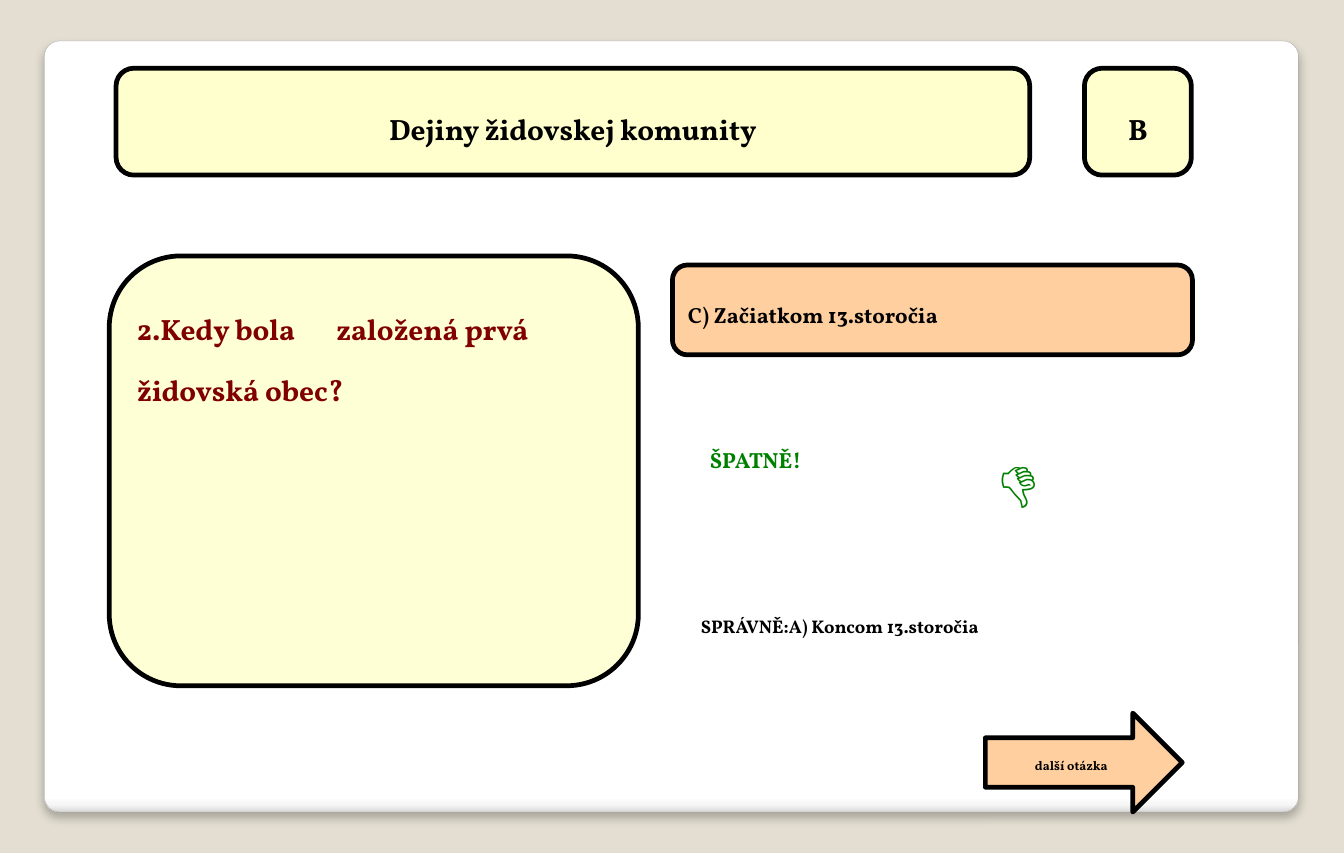
from dataclasses import dataclass

from lxml import etree
from pptx import Presentation
from pptx.dml.color import RGBColor
from pptx.enum.shapes import MSO_SHAPE
from pptx.enum.text import MSO_ANCHOR, PP_ALIGN
from pptx.oxml.ns import qn
from pptx.util import Cm, Emu, Inches, Pt

PX = 9144  # one hundredth of an inch
FONT = "Vollkorn"
RAISE = 3000  # slight superscript, in thousandths of a percent
BLACK, GREEN, MAROON = "000000", "008000", "800000"
YELLOW, ORANGE = "FFFF99", "FF9933"
ROUND = MSO_SHAPE.ROUNDED_RECTANGLE
PANEL = MSO_SHAPE.FLOWCHART_ALTERNATE_PROCESS
ARROW = MSO_SHAPE.RIGHT_ARROW
LEFT, CENTER = PP_ALIGN.LEFT, PP_ALIGN.CENTER
TOP, MIDDLE = MSO_ANCHOR.TOP, MSO_ANCHOR.MIDDLE


@dataclass
class Box:
    kind: MSO_SHAPE
    area: tuple[int, int, int, int]
    fill: str
    alpha: int
    text: str
    size: int
    color: str = BLACK
    align: PP_ALIGN = CENTER
    anchor: MSO_ANCHOR = MIDDLE
    wrap: bool = False
    inset: tuple[int, int, int, int] = (10, 5, 10, 5)


@dataclass
class Label:
    area: tuple[int, int, int, int]
    text: str
    size: int
    color: str
    wrap: bool = True


BOXES = [
    Box(PANEL, (953, 60, 94, 94), YELLOW, 49, "B", 32),
    Box(PANEL, (591, 233, 457, 79), ORANGE, 47,
        "C) Začiatkom 13.storočia", 24, align=LEFT),
    Box(ARROW, (866, 627, 173, 87), ORANGE, 47, "další otázka", 14),
    Box(ROUND, (102, 60, 803, 94), YELLOW, 49, "Dejiny židovskej komunity", 32),
    Box(PANEL, (96, 225, 465, 378), YELLOW, 40,
        "2.Kedy bola\tzaložená prvá židovská obec?", 32, MAROON,
        LEFT, TOP, True, (6, 13, 6, 5)),
]
LABELS = [
    Label((614, 375, 205, 91), "ŠPATNĚ!", 24, GREEN),
    Label((866, 344, 88, 131), "👎", 72, GREEN, False),
    Label((606, 525, 438, 77), "SPRÁVNĚ:A) Koncom 13.storočia", 20, BLACK),
]
STOPS = [(0, "FFFFFF"), (98, "FFFFFF"), (99, "F7F7F7"), (100, "DADADA")]


def px(n: int) -> Emu:
    return Emu(n * PX)


def rgb(code: str) -> RGBColor:
    return RGBColor.from_string(code)


def add_tag(node, tag: str, **attrs):
    return etree.SubElement(node, qn(tag), {k: str(v) for k, v in attrs.items()})


def add_shape(slide, kind: MSO_SHAPE, area: tuple, line: str, width: float):
    shape = slide.shapes.add_shape(kind, *map(px, area))
    shape.shadow.inherit = False
    shape.line.color.rgb = rgb(line)
    shape.line.width = Pt(width)
    return shape


def set_text(frame, text: str, size: int, color: str, wrap: bool,
             align: PP_ALIGN = LEFT) -> None:
    frame.word_wrap = wrap
    frame.text = text
    para = frame.paragraphs[0]
    para.alignment = align
    font = para.font
    font.name, font.size, font.bold = FONT, Pt(size), True
    font.color.rgb = rgb(color)
    font._element.set("baseline", str(RAISE))


def add_card(slide) -> None:
    card = add_shape(slide, ROUND, (39, 36, 1102, 678), "A4A4A4", 0.16)
    card.adjustments[0] = 0.02
    card.fill.gradient()
    card.fill.gradient_angle = 270
    props = card.element.spPr
    stops = props.find(qn("a:gradFill")).find(qn("a:gsLst"))
    for old in list(stops):
        stops.remove(old)
    for pos, code in STOPS:
        stop = add_tag(stops, "a:gs", pos=pos * 1000)
        add_tag(stop, "a:srgbClr", val=code)
    # Soft shadow below the card
    shade = add_tag(props.find(qn("a:effectLst")), "a:outerShdw", blurRad=Pt(6),
                    dist=Pt(4), dir=5400000, algn="ctr", rotWithShape=0)
    tint = add_tag(shade, "a:srgbClr", val=BLACK)
    add_tag(tint, "a:alpha", val=25000)


def add_box(slide, box: Box):
    shape = add_shape(slide, box.kind, box.area, BLACK, 3)
    shape.fill.solid()
    shape.fill.fore_color.rgb = rgb(box.fill)
    tint = shape.element.spPr.find(qn("a:solidFill"))[0]
    add_tag(tint, "a:alpha", val=box.alpha * 1000)
    frame = shape.text_frame
    frame.vertical_anchor = box.anchor
    (frame.margin_left, frame.margin_top,
     frame.margin_right, frame.margin_bottom) = map(px, box.inset)
    set_text(frame, box.text, box.size, box.color, box.wrap, box.align)
    return shape


def add_label(slide, label: Label) -> None:
    area = slide.shapes.add_textbox(*map(px, label.area))
    set_text(area.text_frame, label.text, label.size, label.color, label.wrap)


def set_tab(shape, pos: int) -> None:
    props = shape.text_frame.paragraphs[0].font._element
    tabs = etree.Element(qn("a:tabLst"))
    add_tag(tabs, "a:tab", pos=px(pos), algn="l")
    props.addprevious(tabs)


def main() -> None:
    deck = Presentation()
    deck.slide_width, deck.slide_height = Cm(30), Inches(7.5)
    slide = deck.slides.add_slide(deck.slide_layouts[6])
    back = slide.background.fill
    back.solid()
    back.fore_color.rgb = rgb("E3DED1")

    # Card, then the quiz boxes and the verdict
    add_card(slide)
    shapes = [add_box(slide, box) for box in BOXES]
    set_tab(shapes[-1], 175)
    for label in LABELS:
        add_label(slide, label)
    deck.save("out.pptx")


if __name__ == "__main__":
    main()
